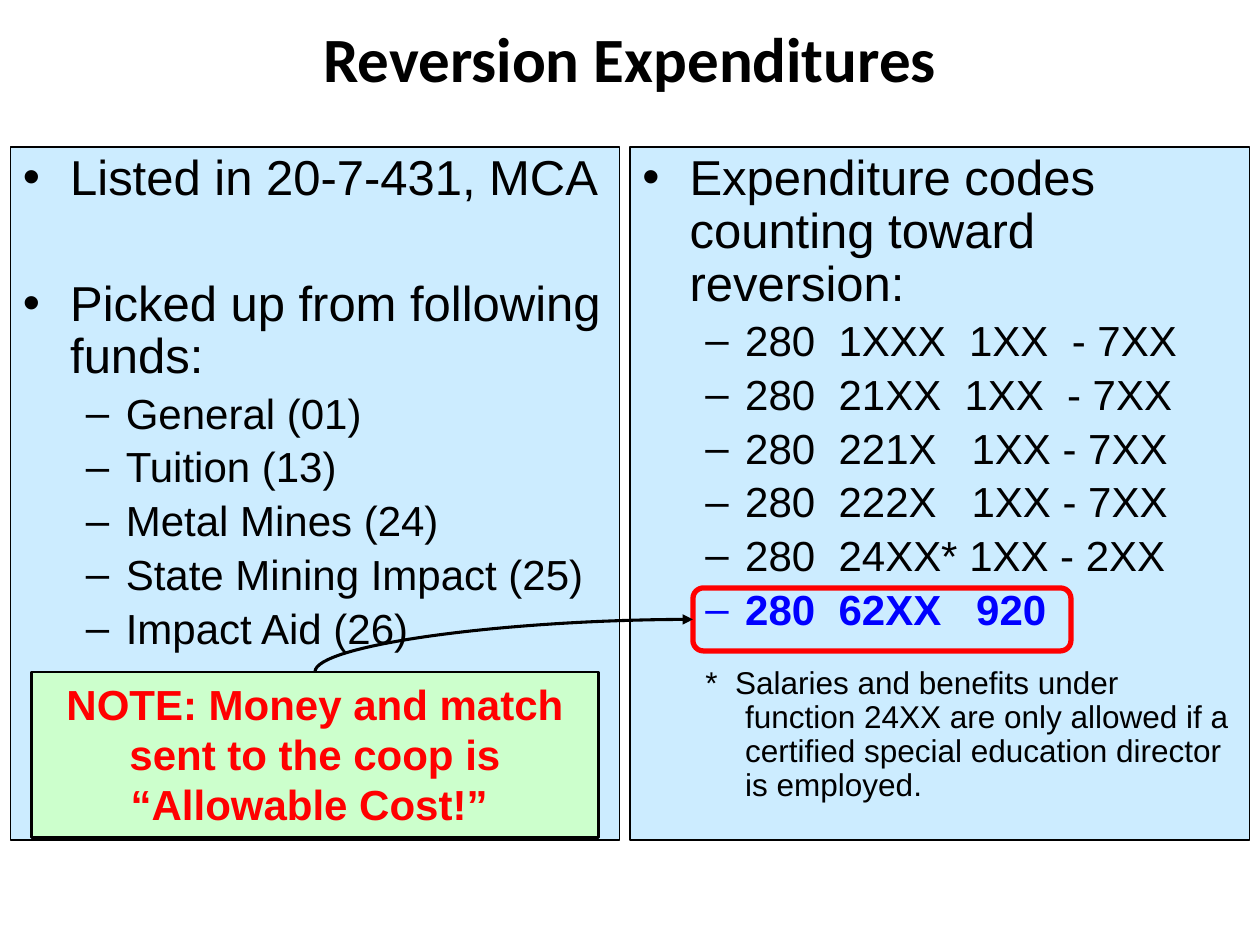
"""Build the Reversion Expenditures slide."""
import dataclasses
import typing

import lxml.etree
import pptx
import pptx.dml.color
import pptx.enum.shapes
import pptx.enum.text
import pptx.oxml.ns
import pptx.util

PX = 7620
BLACK = pptx.dml.color.RGBColor(0x00, 0x00, 0x00)
RED = pptx.dml.color.RGBColor(0xFF, 0x00, 0x00)
BLUE = pptx.dml.color.RGBColor(0x00, 0x00, 0xFF)
SKY = pptx.dml.color.RGBColor(0xCC, 0xEC, 0xFF)
MINT = pptx.dml.color.RGBColor(0xCC, 0xFF, 0xCC)
KIND = pptx.enum.shapes.MSO_SHAPE
MID = pptx.enum.text.PP_ALIGN.CENTER
TOP = pptx.enum.text.MSO_ANCHOR.TOP
LEVELS = ((45, 45), (98, 38))


@dataclasses.dataclass(frozen=True)
class Line:
    """One paragraph of a panel."""
    text: str
    size: int
    mark: str = ""
    level: int = 0
    gap: float = 0
    color: pptx.dml.color.RGBColor = BLACK
    bold: bool = False


@dataclasses.dataclass(frozen=True)
class Box:
    """Place and look of an outlined shape."""
    left: int
    top: int
    width: int
    height: int
    fill: typing.Optional[pptx.dml.color.RGBColor]
    edge: pptx.dml.color.RGBColor
    weight: float
    kind: typing.Any = KIND.RECTANGLE


def head(text: str) -> Line:
    """Return a first-level bullet."""
    return Line(text, 28, "•")


def item(text: str) -> Line:
    """Return a second-level bullet."""
    return Line(text, 24, "–", 1)


FUNDS = (
    head("Listed in 20-7-431, MCA"),
    dataclasses.replace(head("Picked up from following funds:"), gap=41.5),
    *map(item, ("General (01)", "Tuition (13)", "Metal Mines (24)",
                "State Mining Impact (25)", "Impact Aid (26)")),
)
CODES = (
    head("Expenditure codes counting toward reversion:"),
    *map(item, ("280  1XXX  1XX  - 7XX", "280  21XX  1XX  - 7XX",
                "280  221X   1XX - 7XX", "280  222X   1XX - 7XX",
                "280  24XX* 1XX - 2XX")),
    dataclasses.replace(item("280  62XX   920"), color=BLUE, bold=True),
    Line("*  Salaries and benefits under function 24XX are only allowed if a "
         "certified special education director is employed.", 18, level=1, gap=19),
)
PANELS = (
    (Box(10, 140, 580, 660, SKY, BLACK, 0.75), FUNDS),
    (Box(600, 140, 590, 660, SKY, BLACK, 0.75), CODES),
)
NOTE = Box(30, 640, 540, 158, MINT, BLACK, 1.5)
RING = Box(660, 560, 360, 60, None, RED, 3, KIND.ROUNDED_RECTANGLE)


def apply(thing: typing.Any, form: dict) -> None:
    """Set each named value on an object."""
    for name, value in form.items():
        setattr(thing, name, value)


def write(para: typing.Any, text: str, size: int, color: typing.Any,
          bold: bool, face: str = "Arial") -> None:
    """Add a styled run to a paragraph."""
    run = para.add_run()
    apply(run, {"text": text})
    apply(run.font, {"size": pptx.util.Pt(size), "bold": bold, "name": face})
    run.font.color.rgb = color


def add_box(slide: typing.Any, box: Box) -> typing.Any:
    """Draw an outlined shape."""
    spot = (n * PX for n in (box.left, box.top, box.width, box.height))
    shape = slide.shapes.add_shape(box.kind, *spot)
    shape.shadow.inherit = False
    if box.fill is None:
        shape.fill.background()
    else:
        shape.fill.solid()
        shape.fill.fore_color.rgb = box.fill
    shape.line.color.rgb = box.edge
    shape.line.width = pptx.util.Pt(box.weight)
    apply(shape.text_frame, {"word_wrap": True, "vertical_anchor": TOP})
    return shape


def add_panel(slide: typing.Any, box: Box, lines: typing.Sequence[Line]) -> None:
    """Draw a panel with its list."""
    frame = add_box(slide, box).text_frame
    for n, line in enumerate(lines):
        para = frame.add_paragraph() if n else frame.paragraphs[0]
        apply(para, {
            "level": line.level,
            "alignment": pptx.enum.text.PP_ALIGN.LEFT,
            "line_spacing": 0.9,
            "space_before": pptx.util.Pt(line.gap or line.size * 0.2),
        })
        write(para, line.text, line.size, line.color, line.bold)
        prop = para._p.get_or_add_pPr()
        left, hang = LEVELS[line.level]
        prop.set("marL", str(left * PX))
        prop.set("indent", str(-hang * PX))
        if line.mark:
            font = lxml.etree.SubElement(prop, pptx.oxml.ns.qn("a:buFont"))
            font.set("typeface", "Arial")
            mark = lxml.etree.SubElement(prop, pptx.oxml.ns.qn("a:buChar"))
            mark.set("char", line.mark)
        else:
            lxml.etree.SubElement(prop, pptx.oxml.ns.qn("a:buNone"))


def add_title(slide: typing.Any) -> None:
    """Draw the heading."""
    frame = slide.shapes.add_textbox(60 * PX, 0, 1080 * PX, 110 * PX).text_frame
    apply(frame, {"word_wrap": True,
                  "vertical_anchor": pptx.enum.text.MSO_ANCHOR.MIDDLE})
    para = frame.paragraphs[0]
    para.alignment = MID
    write(para, "Reversion Expenditures", 36, BLACK, True, "Calibri")


def add_curve(slide: typing.Any, note: typing.Any, ring: typing.Any) -> None:
    """Draw the curved arrow from the note's top to the ring's left side."""
    curve = slide.shapes.add_connector(
        pptx.enum.shapes.MSO_CONNECTOR.CURVE, 0, 0, PX, PX)
    curve.begin_connect(note, 0)
    curve.end_connect(ring, 1)
    wide, high = curve.width, curve.height
    apply(curve, {"left": curve.left + (wide - high) // 2,
                  "top": curve.top + (high - wide) // 2,
                  "width": high, "height": wide})
    prop = curve._element.spPr
    form = prop.find(pptx.oxml.ns.qn("a:xfrm"))
    for name, value in {"rot": "5400000", "flipH": "1", "flipV": "1"}.items():
        form.set(name, value)
    prop.find(pptx.oxml.ns.qn("a:prstGeom")).set("prst", "curvedConnector2")
    curve.line.color.rgb = BLACK
    curve.line.width = pptx.util.Pt(1.75)
    tail = lxml.etree.SubElement(curve.line._get_or_add_ln(),
                                 pptx.oxml.ns.qn("a:tailEnd"))
    tail.set("type", "triangle")
    lxml.etree.SubElement(prop, pptx.oxml.ns.qn("a:effectLst"))


def main() -> None:
    """Build and save the deck."""
    deck = pptx.Presentation()
    apply(deck, {"slide_width": 1200 * PX, "slide_height": 900 * PX})
    slide = deck.slides.add_slide(deck.slide_layouts[6])
    add_title(slide)
    for box, lines in PANELS:
        add_panel(slide, box, lines)
    note = add_box(slide, NOTE)
    para = note.text_frame.paragraphs[0]
    para.alignment = MID
    write(para, "NOTE: Money and match sent to the coop is “Allowable Cost!” ",
          24, RED, True)
    ring = add_box(slide, RING)
    add_curve(slide, note, ring)
    deck.save("out.pptx")


if __name__ == "__main__":
    main()
